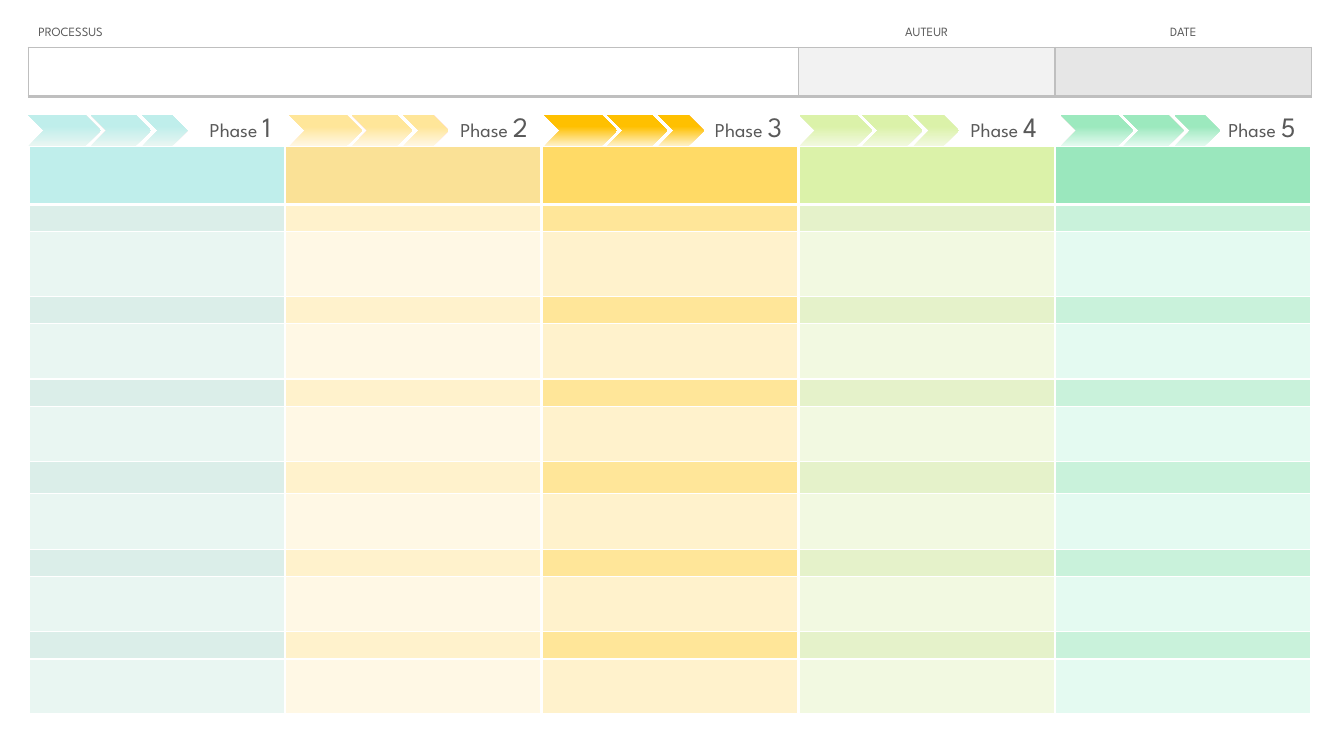
from dataclasses import dataclass

import lxml.etree
import pptx
import pptx.dml.color
import pptx.enum.shapes
import pptx.enum.text
import pptx.oxml.ns
import pptx.presentation
import pptx.shapes.autoshape
import pptx.slide
import pptx.table
import pptx.text.text
import pptx.util

RGB = pptx.dml.color.RGBColor
ALIGN = pptx.enum.text.PP_ALIGN
ANCHOR = pptx.enum.text.MSO_ANCHOR

SLIDE_WIDTH = pptx.util.Inches(13.33)
SLIDE_HEIGHT = pptx.util.Inches(7.5)
GRID_COLUMNS, GRID_ROWS = 1333, 750

FONT = "League Spartan"
TEXT_GREY = RGB.from_string("595959")
LINE_GREY = RGB.from_string("BFBFBF")
WHITE = RGB.from_string("FFFFFF")
PALE_GREY = RGB.from_string("F2F2F2")
MID_GREY = RGB.from_string("E6E6E6")

LEFT, HEADER_TOP, PHASES_TOP = 28, 19, 114
PHASE_WIDTH = 1273 / 5
ARROW_HEIGHT = 31
HEADER_ROWS = [28, 49]
PHASE_ROWS = [30, 59, 27, 64] + [27, 55] * 2 + [32, 55] + [27, 55] * 2
THIN, THICK = 1, 2.25
ROW_LINES = [THIN, THICK, THICK] + [THIN] * (len(PHASE_ROWS) - 3) + [THICK]


@dataclass(frozen=True)
class Field:
    label: str
    span: int
    fill: RGB
    indent: float = 0
    align: ALIGN = ALIGN.CENTER


@dataclass(frozen=True)
class Phase:
    number: str
    arrows_left: float
    indent: float
    title: RGB
    band: RGB
    body: RGB
    arrow_light: RGB
    arrow_dark: RGB
    align: ALIGN = ALIGN.LEFT


@dataclass(frozen=True)
class Arrow:
    offset: float
    width: float


def palette(*codes: str) -> list[RGB]:
    return [RGB.from_string(code) for code in codes]


FIELDS = [
    Field("PROCESSUS", 3, WHITE, 9, ALIGN.LEFT),
    Field("AUTEUR", 1, PALE_GREY),
    Field("DATE", 1, MID_GREY),
]
PHASES = [
    Phase("1", 28, 166, *palette("BFEEEB", "DBEEE9", "E9F6F2", "E9F6F2", "BFEEEB"), ALIGN.CENTER),
    Phase("2", 287, 173, *palette("FAE196", "FFF2CC", "FFF8E5", "FFF7E5", "FFE699")),
    Phase("3", 540, 171, *palette("FFDA66", "FFE699", "FFF2CC", "FFF2CC", "FFC000")),
    Phase("4", 793, 170, *palette("DBF2A9", "E5F2CA", "F2F9E1", "F2F9E0", "DBF2A9")),
    Phase("5", 1052, 171, *palette("9AE7BD", "C9F2DB", "E4FAF1", "E4FAF0", "9CE9BE")),
]
ARROWS = [Arrow(0, 72), Arrow(62, 60), Arrow(113, 45)]


def across(columns: float) -> pptx.util.Emu:
    return pptx.util.Emu(round(SLIDE_WIDTH * columns / GRID_COLUMNS))


def down(rows: float) -> pptx.util.Emu:
    return pptx.util.Emu(round(SLIDE_HEIGHT * rows / GRID_ROWS))


def write(para: pptx.text.text._Paragraph, text: str, *, size: float,
          align: ALIGN = ALIGN.LEFT, indent: float = 0) -> None:
    para.alignment = align
    properties = para._p.get_or_add_pPr()
    properties.set("marL", str(across(indent)))
    properties.set("indent", "0")
    span = para.add_run()
    span.text = text
    span.font.size = pptx.util.Pt(size)
    span.font.name = FONT
    span.font.color.rgb = TEXT_GREY


def draw_borders(cell: pptx.table._Cell, colour: RGB, left: float, right: float,
                 top: float, bottom: float) -> None:
    properties = cell._tc.get_or_add_tcPr()
    for side, width in zip("LRTB", (left, right, top, bottom)):
        line = lxml.etree.SubElement(properties, pptx.oxml.ns.qn(f"a:ln{side}"),
                                     w=str(pptx.util.Pt(width)))
        solid = lxml.etree.SubElement(line, pptx.oxml.ns.qn("a:solidFill"))
        lxml.etree.SubElement(solid, pptx.oxml.ns.qn("a:srgbClr"), val=str(colour))


def fill_cell(cell: pptx.table._Cell, colour: RGB) -> None:
    cell.fill.solid()
    cell.fill.fore_color.rgb = colour
    para = cell.text_frame.paragraphs[0]
    lxml.etree.SubElement(para._p, pptx.oxml.ns.qn("a:endParaRPr"), sz="900")


def add_grid(page: pptx.slide.Slide, top: float, widths: list[float],
             heights: list[float]) -> pptx.table.Table:
    table = page.shapes.add_table(
        len(heights), len(widths), across(LEFT), down(top),
        across(sum(widths)), down(sum(heights))).table
    table.first_row = table.horz_banding = False
    for column, width in zip(table.columns, widths):
        column.width = across(width)
    for row, height in zip(table.rows, heights):
        row.height = down(height)
    for cell in table.iter_cells():
        cell.margin_left = cell.margin_right = across(1)
        cell.margin_top = cell.margin_bottom = down(1)
        cell.vertical_anchor = ANCHOR.MIDDLE
    return table


def add_header(page: pptx.slide.Slide) -> None:
    widths = [field.span * PHASE_WIDTH for field in FIELDS]
    table = add_grid(page, HEADER_TOP, widths, HEADER_ROWS)
    for index, field in enumerate(FIELDS):
        label, entry = table.cell(0, index), table.cell(1, index)
        label.fill.background()
        write(label.text_frame.paragraphs[0], field.label, size=9,
              align=field.align, indent=field.indent)
        draw_borders(entry, LINE_GREY, THIN, THIN, THIN, THICK)
        fill_cell(entry, field.fill)


def add_phases(page: pptx.slide.Slide) -> None:
    table = add_grid(page, PHASES_TOP, [PHASE_WIDTH] * len(PHASES), PHASE_ROWS)
    for column, phase in enumerate(PHASES):
        for row in range(len(PHASE_ROWS)):
            cell = table.cell(row, column)
            side = THICK if row else THIN
            draw_borders(cell, WHITE, side, side, ROW_LINES[row], ROW_LINES[row + 1])
            if row == 0:
                cell.fill.background()
                cell.vertical_anchor = ANCHOR.BOTTOM
                para = cell.text_frame.paragraphs[0]
                for text, size in (("Phase ", 14), (phase.number, 20)):
                    write(para, text, size=size, align=phase.align, indent=phase.indent)
            elif row == 1:
                fill_cell(cell, phase.title)
            else:
                fill_cell(cell, phase.body if row % 2 else phase.band)


def add_arrow(page: pptx.slide.Slide, phase: Phase, arrow: Arrow) -> None:
    shape = page.shapes.add_shape(
        pptx.enum.shapes.MSO_SHAPE.CHEVRON, across(phase.arrows_left + arrow.offset),
        down(PHASES_TOP), across(arrow.width), down(ARROW_HEIGHT))
    shape.shadow.inherit = False
    shape.line.fill.background()
    shape.fill.gradient()
    shape.fill.gradient_angle = 90
    stops = ((0, phase.arrow_light), (0.63, phase.arrow_dark))
    for stop, (position, colour) in zip(shape.fill.gradient_stops, stops):
        stop.position = position
        stop.color.rgb = colour


def main() -> None:
    deck = pptx.Presentation()
    deck.slide_width, deck.slide_height = SLIDE_WIDTH, SLIDE_HEIGHT
    page = deck.slides.add_slide(deck.slide_layouts[6])
    add_header(page)
    add_phases(page)
    for phase in PHASES:
        for arrow in ARROWS:
            add_arrow(page, phase, arrow)
    deck.save("out.pptx")


if __name__ == "__main__":
    main()
